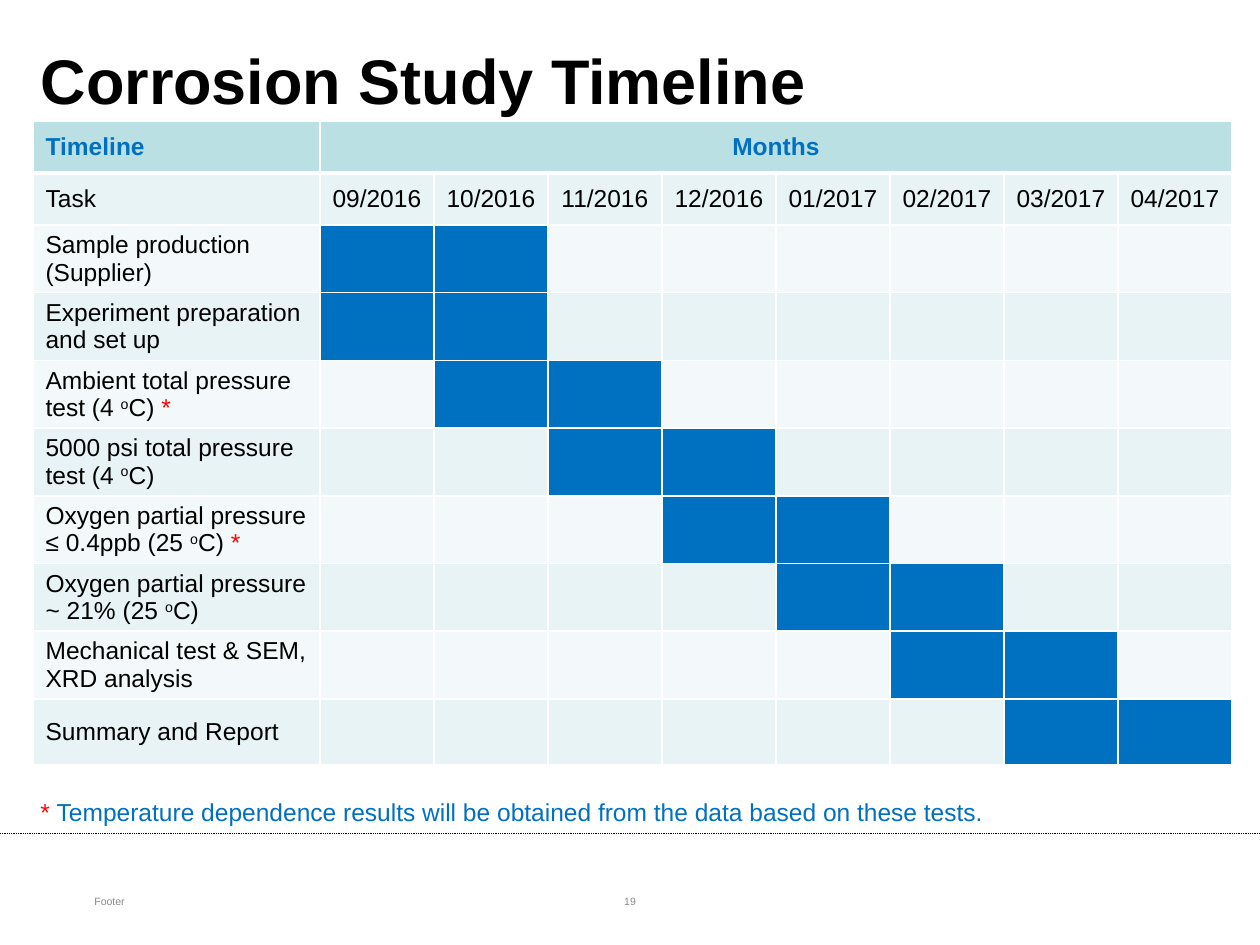
from lxml.etree import SubElement
from pptx import Presentation
from pptx.dml.color import RGBColor
from pptx.enum.dml import MSO_LINE
from pptx.enum.shapes import MSO_CONNECTOR
from pptx.enum.text import MSO_ANCHOR as Anchor, MSO_AUTO_SIZE as AutoSize, PP_ALIGN as Align
from pptx.oxml.ns import qn
from pptx.util import Emu, Pt

PX_PER_INCH = 126
COLORS = {
    "black": "000000", "white": "FFFFFF", "blue": "0070C0", "red": "FF0000",
    "grey": "898989", "header": "BBE0E3", "dark band": "E7F3F4", "light band": "F3F9FA",
}
BODY = {"size": 14, "bold": False, "color": "black"}
HEADER = {"size": 14, "bold": True, "color": "blue"}
FOOTER = {"size": 6, "color": "grey"}

MONTHS = ["09/2016", "10/2016", "11/2016", "12/2016",
          "01/2017", "02/2017", "03/2017", "04/2017"]
DEGREE = ("o", {"baseline": 30000})
STAR = ("*", {"color": "red"})
# Paragraphs of spans for each task, then the column of its first month
TASKS = [
    ([["Sample production"], ["(Supplier)"]], 1),
    ([["Experiment preparation and set up"]], 1),
    ([["Ambient total pressure test (4 ", DEGREE, "C) ", STAR]], 2),
    ([["5000 psi total pressure test (4 ", DEGREE, "C)"]], 3),
    ([["Oxygen partial pressure ≤ 0.4ppb (25 ", DEGREE, "C) ", STAR]], 4),
    ([["Oxygen partial pressure ~ 21% (25 ", DEGREE, "C)"]], 5),
    ([["Mechanical test & SEM, XRD analysis"]], 6),
    ([["Summary and Report"]], 7),
]
MONTHS_PER_TASK = 2


def px(length):
    return Emu(round(length * 914400 / PX_PER_INCH))


def rgb(name):
    return RGBColor.from_string(COLORS[name])


def format_span(span, style):
    values = {"name": "Arial", **style}
    span.font.color.rgb = rgb(values.pop("color"))
    values["size"] = Pt(values["size"])
    baseline = values.pop("baseline", None)
    for name, value in values.items():
        setattr(span.font, name, value)
    if baseline:
        span._r.get_or_add_rPr().set("baseline", str(baseline))


def write(frame, paragraphs, style, align=Align.LEFT):
    """Fill a text frame; a span is a string or a (string, style changes) pair."""
    for index, spans in enumerate(paragraphs):
        para = frame.add_paragraph() if index else frame.paragraphs[0]
        para.alignment = align
        for item in spans:
            text, changes = (item, {}) if isinstance(item, str) else item
            span = para.add_run()
            span.text = text
            format_span(span, {**style, **changes})


def add_title(page, text):
    title = page.shapes.title
    for name, value in {"left": 28, "top": 44, "width": 857, "height": 71}.items():
        setattr(title, name, px(value))
    title.text_frame.vertical_anchor = Anchor.MIDDLE
    write(title.text_frame, [[text]], {"size": 36, "bold": True, "color": "black"})


def add_text(page, place, spans, style, align=Align.LEFT, **frame_values):
    box = page.shapes.add_textbox(*map(px, place))
    for name, value in {"word_wrap": True, **frame_values}.items():
        setattr(box.text_frame, name, value)
    write(box.text_frame, [spans], style, align)


def add_dotted_line(page, y, width):
    line = page.shapes.add_connector(MSO_CONNECTOR.STRAIGHT, 0, px(y), px(width), px(y))
    line.line.color.rgb = rgb("black")
    line.line.width = Pt(0.5)
    line.line.dash_style = MSO_LINE.ROUND_DOT
    SubElement(line._element.spPr, qn("a:effectLst"))


def style_cell(cell, fill, top=1, bottom=1):
    """Set white borders, with top and bottom widths in points, then the fill."""
    properties = cell._tc.get_or_add_tcPr()
    for side, width in {"L": 1, "R": 1, "T": top, "B": bottom}.items():
        border = SubElement(properties, qn(f"a:ln{side}"), w=str(Pt(width)))
        color = SubElement(border, qn("a:solidFill"))
        SubElement(color, qn("a:srgbClr"), val=COLORS["white"])
    cell.fill.solid()
    cell.fill.fore_color.rgb = rgb(fill)
    cell.vertical_anchor = Anchor.MIDDLE


def add_timeline(page):
    rows, columns = len(TASKS) + 2, len(MONTHS) + 1
    frame = page.shapes.add_table(rows, columns, *map(px, (33, 121, 1199, 668)))
    table = frame.table
    for index, column in enumerate(table.columns):
        column.width = px(114 if index else 287)
    for index, row in enumerate(table.rows):
        row.height = px(66 if index == rows - 1 else 52)
    frame.height = px(668)

    for column in range(columns):
        style_cell(table.cell(0, column), "header", bottom=3)
        style_cell(table.cell(1, column), "dark band", top=3)
    table.cell(0, 1).merge(table.cell(0, columns - 1))
    write(table.cell(0, 0).text_frame, [["Timeline"]], HEADER)
    write(table.cell(0, 1).text_frame, [["Months"]], HEADER, Align.CENTER)
    write(table.cell(1, 0).text_frame, [["Task"]], BODY)
    for column, month in enumerate(MONTHS, 1):
        write(table.cell(1, column).text_frame, [[month]], BODY, Align.CENTER)

    for row, (paragraphs, start) in enumerate(TASKS, 2):
        band = "dark band" if row % 2 else "light band"
        for column in range(columns):
            active = start <= column < start + MONTHS_PER_TASK
            style_cell(table.cell(row, column), "blue" if active else band)
        write(table.cell(row, 0).text_frame, paragraphs, BODY)


def main():
    deck = Presentation()
    deck.slide_width, deck.slide_height = px(1260), px(945)
    page = deck.slides.add_slide(deck.slide_layouts.get_by_name("Title Only"))
    add_dotted_line(page, 833, 1260)
    add_title(page, "Corrosion Study Timeline")
    add_timeline(page)
    add_text(page, (82, 876, 399, 50), ["Footer"], FOOTER, vertical_anchor=Anchor.MIDDLE)
    add_text(page, (483, 876, 294, 50), ["19"], FOOTER, Align.CENTER,
             vertical_anchor=Anchor.MIDDLE)
    note = "Temperature dependence results will be obtained from the data based on these tests."
    add_text(page, (28, 791, 1086, 43), [("* ", {"color": "red"}), note],
             {"size": 14, "color": "blue"}, auto_size=AutoSize.SHAPE_TO_FIT_TEXT)
    deck.save("out.pptx")


if __name__ == "__main__":
    main()
